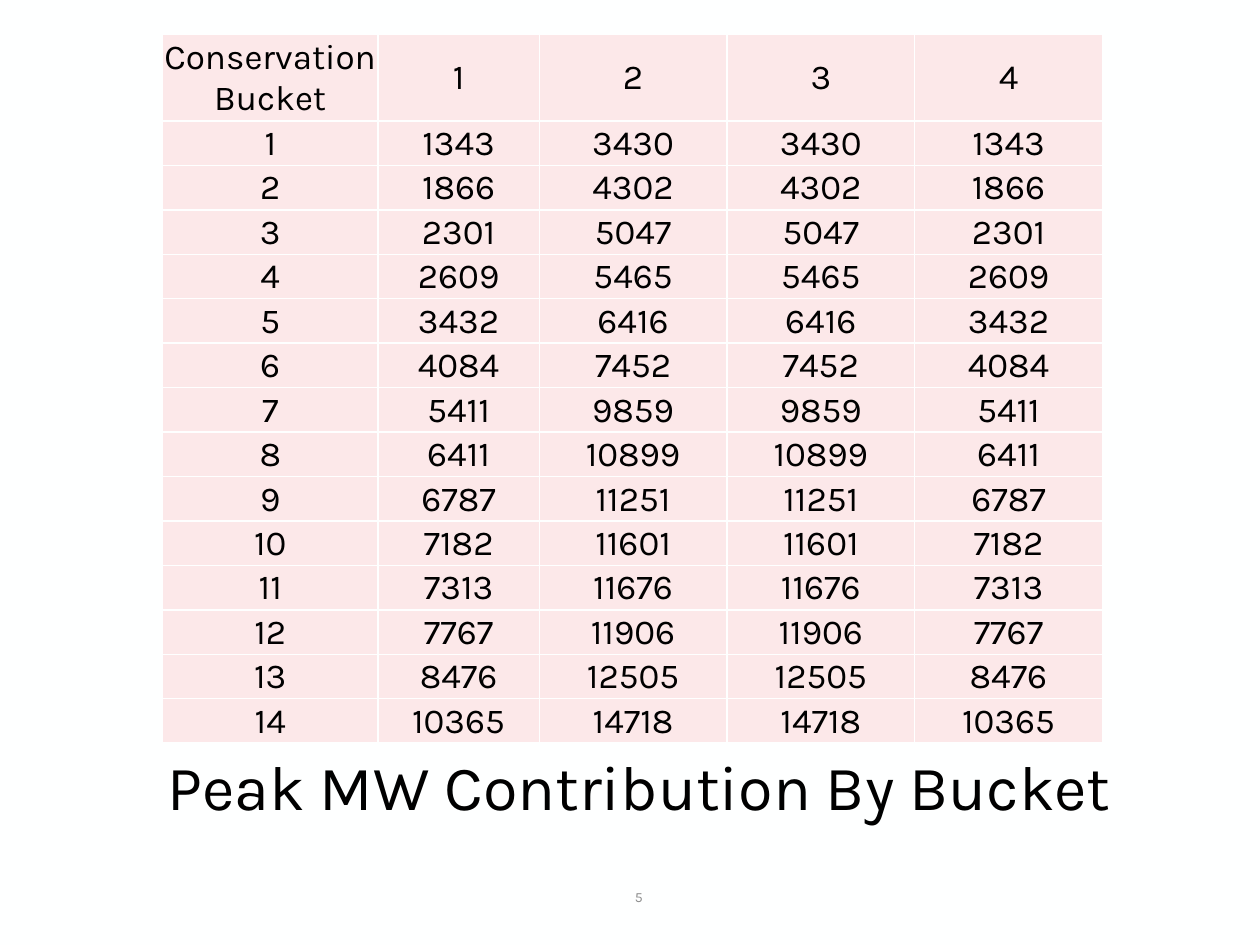
from lxml import etree
from pptx import Presentation
from pptx.dml.color import RGBColor
from pptx.enum.text import MSO_ANCHOR, PP_ALIGN
from pptx.oxml.ns import qn
from pptx.util import Inches, Pt

CENTER = PP_ALIGN.CENTER
MIDDLE = MSO_ANCHOR.MIDDLE
TITLE_ONLY = 5
FONT = "Karla"
BLACK, GRAY, PINK, WHITE = "000000", "8C8C8C", "FCE8E9", "FEFFFF"

TABLE_TOP, TABLE_HEIGHT, HEADER_HEIGHT = 0.27, 5.63, 0.69
TABLE_LEFT = 1.29
COLUMN_WIDTHS = [1.71, 1.28, 1.49, 1.49, 1.49]
HEADER = ["Conservation Bucket", 1, 2, 3, 4]
OUTER_PEAKS = [1343, 1866, 2301, 2609, 3432, 4084, 5411,
               6411, 6787, 7182, 7313, 7767, 8476, 10365]
INNER_PEAKS = [3430, 4302, 5047, 5465, 6416, 7452, 9859,
               10899, 11251, 11601, 11676, 11906, 12505, 14718]


def color(value):
    return RGBColor.from_string(value)


def add_run(paragraph, text, size, text_color=BLACK):
    paragraph.alignment = CENTER
    run = paragraph.add_run()
    run.text = text
    run.font.name = FONT
    run.font.size = Pt(size)
    run.font.color.rgb = color(text_color)


def add_borders(cell):
    properties = cell._tc.get_or_add_tcPr()
    for side in ("a:lnL", "a:lnR", "a:lnT", "a:lnB"):
        line = etree.SubElement(properties, qn(side), w=str(Pt(1)))
        fill = etree.SubElement(line, qn("a:solidFill"))
        etree.SubElement(fill, qn("a:srgbClr"), val=WHITE)


def format_cell(cell, value):
    add_borders(cell)
    cell.fill.solid()
    cell.fill.fore_color.rgb = color(PINK)
    cell.vertical_anchor = MIDDLE
    cell.margin_left = cell.margin_right = cell.margin_top = Inches(0.01)
    cell.margin_bottom = 0
    add_run(cell.text_frame.paragraphs[0], str(value), 20)


def add_peak_table(slide):
    buckets = [[number, outer, inner, inner, outer]
               for number, (outer, inner) in enumerate(zip(OUTER_PEAKS, INNER_PEAKS), 1)]
    rows = [HEADER] + buckets
    table = slide.shapes.add_table(
        len(rows), len(HEADER), Inches(TABLE_LEFT), Inches(TABLE_TOP),
        Inches(sum(COLUMN_WIDTHS)), Inches(TABLE_HEIGHT)).table
    table.first_row = table.horz_banding = False
    for column, width in zip(table.columns, COLUMN_WIDTHS):
        column.width = Inches(width)
    bucket_height = (TABLE_HEIGHT - HEADER_HEIGHT) / len(buckets)
    for index, values in enumerate(rows):
        table.rows[index].height = Inches(bucket_height if index else HEADER_HEIGHT)
        for cell, value in zip(table.rows[index].cells, values):
            format_cell(cell, value)


def set_title(slide, text):
    title = slide.shapes.title
    title.left, title.top = Inches(0.74), Inches(6.02)
    title.width, title.height = Inches(8.67), Inches(1.1)
    title.text_frame.vertical_anchor = MIDDLE
    paragraph = title.text_frame.paragraphs[0]
    paragraph.line_spacing = 0.9
    add_run(paragraph, text, 36)
    paragraph.add_line_break()
    etree.SubElement(paragraph._p, qn("a:endParaRPr"), sz="3600")


def add_page_number(slide, number):
    box = slide.shapes.add_textbox(Inches(4.78), Inches(6.92), Inches(0.58), Inches(0.4))
    box.text_frame.word_wrap = True
    box.text_frame.vertical_anchor = MIDDLE
    add_run(box.text_frame.paragraphs[0], number, 8, GRAY)


def main():
    presentation = Presentation()
    presentation.slide_width = Inches(10)
    presentation.slide_height = Inches(7.5)
    slide = presentation.slides.add_slide(presentation.slide_layouts[TITLE_ONLY])
    slide.background.fill.solid()
    slide.background.fill.fore_color.rgb = color(WHITE)
    set_title(slide, "Peak MW Contribution By Bucket")
    add_peak_table(slide)
    add_page_number(slide, "5")
    presentation.save("out.pptx")


if __name__ == "__main__":
    main()
